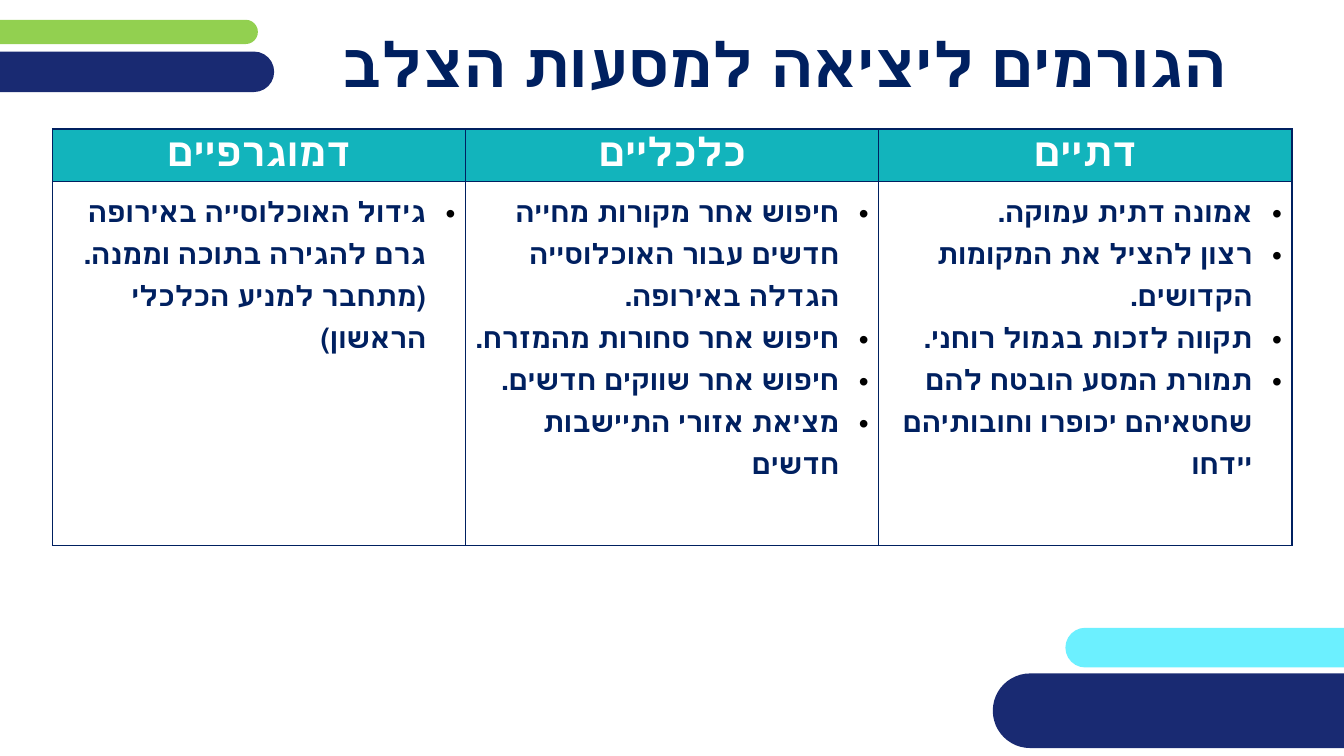
from dataclasses import dataclass

from pptx import Presentation, util as u
from pptx.dml import color
from pptx.enum import shapes, text
from pptx.oxml import ns
from lxml import etree


@dataclass(frozen=True)
class Theme:
    font: str = "Arial"
    ink: str = "002060"
    navy: str = "192A72"
    green: str = "92D050"
    cyan: str = "6CF0FF"
    teal: str = "12B4BC"
    white: str = "FFFFFF"
    black: str = "000000"
    title: int = 44
    head: int = 28
    body: int = 20
    lead: int = 30


THEME = Theme()
TITLE = "הגורמים ליציאה למסעות הצלב"
CAUSES = [
    ("דמוגרפיים", [
        "גידול האוכלוסייה באירופה גרם להגירה בתוכה וממנה.\n(מתחבר למניע הכלכלי הראשון)",
    ]),
    ("כלכליים", [
        "חיפוש אחר מקורות מחייה חדשים עבור האוכלוסייה הגדלה באירופה.",
        "חיפוש אחר סחורות מהמזרח.",
        "חיפוש אחר שווקים חדשים.",
        "מציאת אזורי התיישבות חדשים",
    ]),
    ("דתיים", [
        "אמונה דתית עמוקה.",
        "רצון להציל את המקומות הקדושים.",
        "תקווה לזכות בגמול רוחני.",
        "תמורת המסע הובטח להם שחטאיהם יכופרו וחובותיהם יידחו",
    ]),
]
BARS = [
    (26.85, 15.82, 13.23, 1, THEME.cyan),
    (-0.71, 0.5, 7.21, 0.61, THEME.green),
    (-1.35, 1.3, 8.26, 1.02, THEME.navy),
    (25.02, 16.97, 10.44, 1.88, THEME.navy),
]


def rgb(tone):
    return color.RGBColor.from_string(tone)


def add_bar(slide, left, top, width, height, tone):
    bar = slide.shapes.add_shape(
        shapes.MSO_SHAPE.ROUNDED_RECTANGLE,
        u.Cm(left), u.Cm(top), u.Cm(width), u.Cm(height))
    bar.adjustments[0] = 0.5
    bar.shadow.inherit = False
    bar.fill.solid()
    bar.fill.fore_color.rgb = rgb(tone)
    bar.line.fill.background()


def write(para, words, size, tone, align):
    """Fill a right-to-left paragraph, with a line break at each newline."""
    para.alignment = align
    para._p.get_or_add_pPr().set("rtl", "1")
    for i, line in enumerate(words.split("\n")):
        if i:
            para.add_line_break()
        run = para.add_run()
        run.text = line
        run.font.name = THEME.font
        run.font.size = u.Pt(size)
        run.font.bold = True
        run.font.color.rgb = rgb(tone)


def add_dot(para):
    para.line_spacing = u.Pt(THEME.lead)
    props = para._p.get_or_add_pPr()
    props.set("marL", str(u.Cm(0.74)))
    props.set("indent", str(-u.Cm(0.74)))
    tint = etree.SubElement(props, ns.qn("a:buClr"))
    etree.SubElement(tint, ns.qn("a:srgbClr"), val=THEME.black)
    etree.SubElement(props, ns.qn("a:buFont"), typeface="Arial")
    etree.SubElement(props, ns.qn("a:buChar"), char="•")


def add_edges(cell):
    props = cell._tc.get_or_add_tcPr()
    for side in "LRTB":
        edge = etree.SubElement(props, ns.qn("a:ln" + side), w=str(u.Pt(1)))
        fill = etree.SubElement(edge, ns.qn("a:solidFill"))
        etree.SubElement(fill, ns.qn("a:srgbClr"), val=THEME.ink)


def fill_head(cell, label):
    add_edges(cell)
    cell.fill.solid()
    cell.fill.fore_color.rgb = rgb(THEME.teal)
    cell.vertical_anchor = text.MSO_ANCHOR.MIDDLE
    write(cell.text_frame.paragraphs[0], label, THEME.head, THEME.white,
          text.PP_ALIGN.CENTER)


def fill_list(cell, items):
    add_edges(cell)
    cell.fill.background()
    frame = cell.text_frame
    for i, item in enumerate(items):
        para = frame.add_paragraph() if i else frame.paragraphs[0]
        write(para, item, THEME.body, THEME.ink, text.PP_ALIGN.RIGHT)
        add_dot(para)


def add_grid(slide):
    grid = slide.shapes.add_table(
        2, len(CAUSES), u.Cm(1.32), u.Cm(3.25), u.Cm(31.24), u.Cm(10.49)).table
    grid.first_row = grid.horz_banding = False
    for row, height in zip(grid.rows, (1.32, 9.17)):
        row.height = u.Cm(height)
    for col, (label, items) in enumerate(CAUSES):
        fill_head(grid.cell(0, col), label)
        fill_list(grid.cell(1, col), items)


def set_title(slide):
    box = slide.shapes.title
    box.left, box.top = u.Cm(7.09), u.Cm(0.58)
    box.width, box.height = u.Cm(25.35), u.Cm(2.01)
    frame = box.text_frame
    frame.word_wrap = True
    frame.vertical_anchor = text.MSO_ANCHOR.MIDDLE
    write(frame.paragraphs[0], TITLE, THEME.title, THEME.ink,
          text.PP_ALIGN.CENTER)


def main():
    deck = Presentation()
    deck.slide_width, deck.slide_height = u.Cm(33.87), u.Cm(19.05)
    slide = deck.slides.add_slide(deck.slide_layouts[5])
    for bar in BARS:
        add_bar(slide, *bar)
    set_title(slide)
    add_grid(slide)
    deck.save("out.pptx")


if __name__ == "__main__":
    main()
